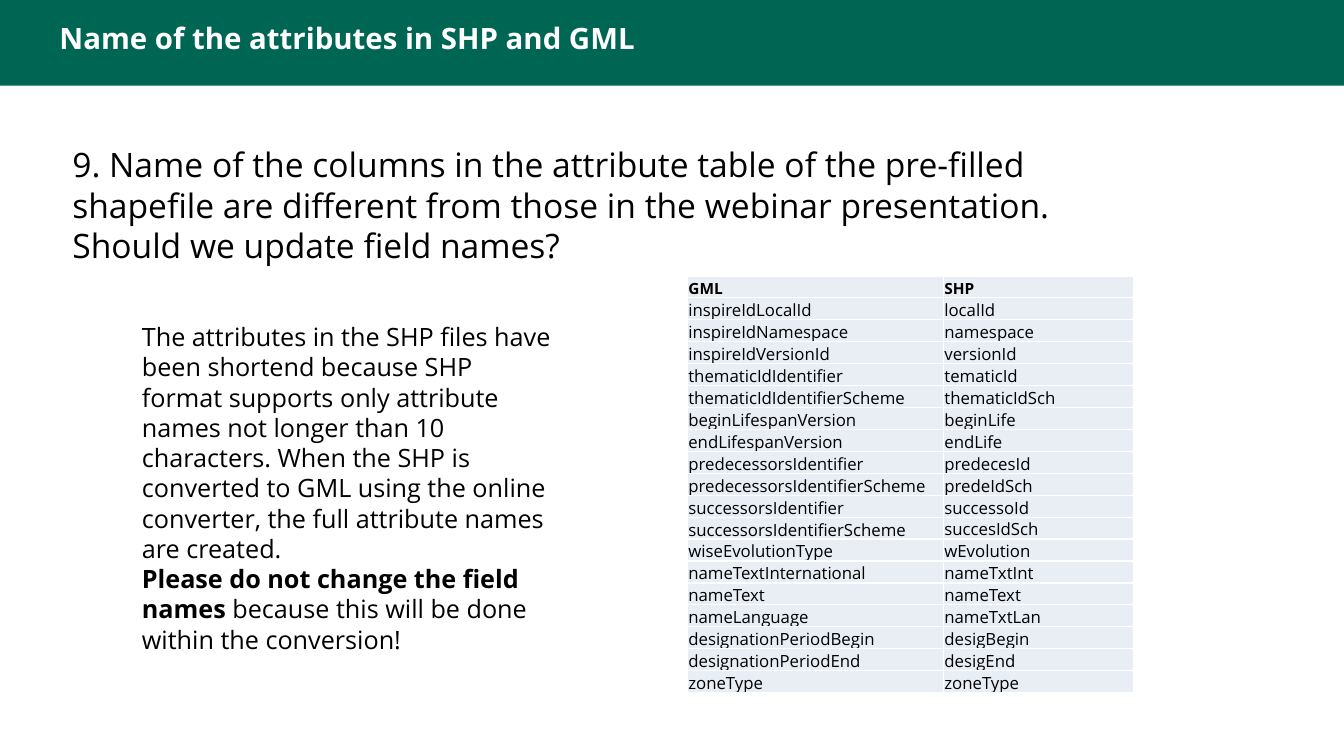
from lxml import etree
from pptx import Presentation
from pptx.dml.color import RGBColor
from pptx.enum.shapes import MSO_SHAPE
from pptx.enum.text import MSO_ANCHOR, MSO_AUTO_SIZE
from pptx.oxml.ns import qn
from pptx.util import Pt

RECTANGLE = MSO_SHAPE.RECTANGLE
TOP, MIDDLE, BOTTOM = MSO_ANCHOR.TOP, MSO_ANCHOR.MIDDLE, MSO_ANCHOR.BOTTOM
NO_AUTOFIT = MSO_AUTO_SIZE.NONE

# Content: each paragraph is a list of (text, bold) spans
TITLE = [[("Name of the attributes in SHP and GML", True)]]
QUESTION = [[(
    "9. Name of the columns in the attribute table of the pre-filled shapefile "
    "are different from those in the webinar presentation. "
    "Should we update field names?", False)]]
ANSWER = [
    [("The attributes in the SHP files have been shortend because SHP format "
      "supports only attribute names not longer than 10 characters. When the "
      "SHP is converted to GML using the online converter, the full attribute "
      "names are created.", False)],
    [("Please do not change the field names ", True),
     ("because this will be done within the conversion!", False)],
]
FIELD_NAMES = [
    ("GML", "SHP"),
    ("inspireIdLocalId", "localId"),
    ("inspireIdNamespace", "namespace"),
    ("inspireIdVersionId", "versionId"),
    ("thematicIdIdentifier", "tematicId"),
    ("thematicIdIdentifierScheme", "thematicIdSch"),
    ("beginLifespanVersion", "beginLife"),
    ("endLifespanVersion", "endLife"),
    ("predecessorsIdentifier", "predecesId"),
    ("predecessorsIdentifierScheme", "predeIdSch"),
    ("successorsIdentifier", "successoId"),
    ("successorsIdentifierScheme", "succesIdSch"),
    ("wiseEvolutionType", "wEvolution"),
    ("nameTextInternational", "nameTxtInt"),
    ("nameText", "nameText"),
    ("nameLanguage", "nameTxtLan"),
    ("designationPeriodBegin", "desigBegin"),
    ("designationPeriodEnd", "desigEnd"),
    ("zoneType", "zoneType"),
]


class Theme:
    font = "Open Sans"
    green = RGBColor(0x00, 0x66, 0x54)
    white = RGBColor(0xFF, 0xFF, 0xFF)
    black = RGBColor(0x00, 0x00, 0x00)
    cell = RGBColor(0xE9, 0xED, 0xF4)
    title_size, question_size, answer_size = 21, 24, 18
    header_size, field_size = 11, 12


# Layout, in points
PAGE_WIDTH, PAGE_HEIGHT = 960, 540
BANNER_HEIGHT = 61.2
TITLE_AREA = (35.3, 10.8, 899.3, 41)
QUESTION_AREA = (44.6, 99.4, 788.4, 94.3)
ANSWER_AREA = (94.3, 226.1, 307.4, 225.4)
TABLE_LEFT, TABLE_TOP = 491, 197.6
COLUMN_WIDTHS = (182.9, 136.1)
HEADER_HEIGHT, ROW_HEIGHT = 15, 15.7
CELL_INSET = 0.7


def write(frame, paragraphs, size, color=Theme.black, anchor=TOP):
    """Fill a text frame with paragraphs made of (text, bold) spans."""
    frame.word_wrap = True
    frame.vertical_anchor = anchor
    for index, spans in enumerate(paragraphs):
        para = frame.add_paragraph() if index else frame.paragraphs[0]
        para.font.size = Pt(size)
        for text, bold in spans:
            span = para.add_run()
            span.text = text
            span.font.name = Theme.font
            span.font.size = Pt(size)
            span.font.bold = bold
            span.font.color.rgb = color


def add_cell_borders(cell, color, width):
    properties = cell._tc.get_or_add_tcPr()
    for position, side in enumerate(("a:lnL", "a:lnR", "a:lnT", "a:lnB")):
        line = etree.Element(qn(side), w=str(Pt(width)))
        fill = etree.SubElement(line, qn("a:solidFill"))
        etree.SubElement(fill, qn("a:srgbClr"), val=str(color))
        properties.insert(position, line)


def add_banner(page):
    banner = page.shapes.add_shape(RECTANGLE, 0, 0, Pt(PAGE_WIDTH), Pt(BANNER_HEIGHT))
    banner.shadow.inherit = False
    banner.fill.solid()
    banner.fill.fore_color.rgb = Theme.green
    banner.line.fill.background()
    # Keep the banner behind the title
    page.shapes._spTree.insert(2, banner._element)


def add_title(page):
    title = page.shapes.title
    title.left, title.top, title.width, title.height = map(Pt, TITLE_AREA)
    write(title.text_frame, TITLE, Theme.title_size, color=Theme.white)
    title.text_frame.auto_size = NO_AUTOFIT
    title.text_frame.paragraphs[0].alignment = 1


def add_field_table(page):
    row_heights = [HEADER_HEIGHT] + [ROW_HEIGHT] * (len(FIELD_NAMES) - 1)
    table = page.shapes.add_table(
        len(FIELD_NAMES), len(COLUMN_WIDTHS), Pt(TABLE_LEFT), Pt(TABLE_TOP),
        Pt(sum(COLUMN_WIDTHS)), Pt(sum(row_heights))).table
    table.horz_banding = False
    for column, width in zip(table.columns, COLUMN_WIDTHS):
        column.width = Pt(width)
    for row_index, names in enumerate(FIELD_NAMES):
        row = table.rows[row_index]
        row.height = Pt(row_heights[row_index])
        is_header = row_index == 0
        for column_index, name in enumerate(names):
            cell = row.cells[column_index]
            cell.margin_left = cell.margin_right = cell.margin_top = Pt(CELL_INSET)
            cell.margin_bottom = 0
            cell.fill.solid()
            cell.fill.fore_color.rgb = Theme.cell
            size = Theme.header_size if is_header else Theme.field_size
            write(cell.text_frame, [[(name, is_header)]], size)
            cell.vertical_anchor = BOTTOM if is_header or column_index else MIDDLE
            add_cell_borders(cell, Theme.white, 1)


def main():
    deck = Presentation()
    deck.slide_width, deck.slide_height = Pt(PAGE_WIDTH), Pt(PAGE_HEIGHT)
    page = deck.slides.add_slide(deck.slide_layouts[5])

    # Heading
    add_banner(page)
    add_title(page)

    # Question and answer
    for paragraphs, area, size in (
            (QUESTION, QUESTION_AREA, Theme.question_size),
            (ANSWER, ANSWER_AREA, Theme.answer_size)):
        box = page.shapes.add_textbox(*map(Pt, area))
        write(box.text_frame, paragraphs, size)

    # Field names in both formats
    add_field_table(page)
    deck.save("out.pptx")


if __name__ == "__main__":
    main()
